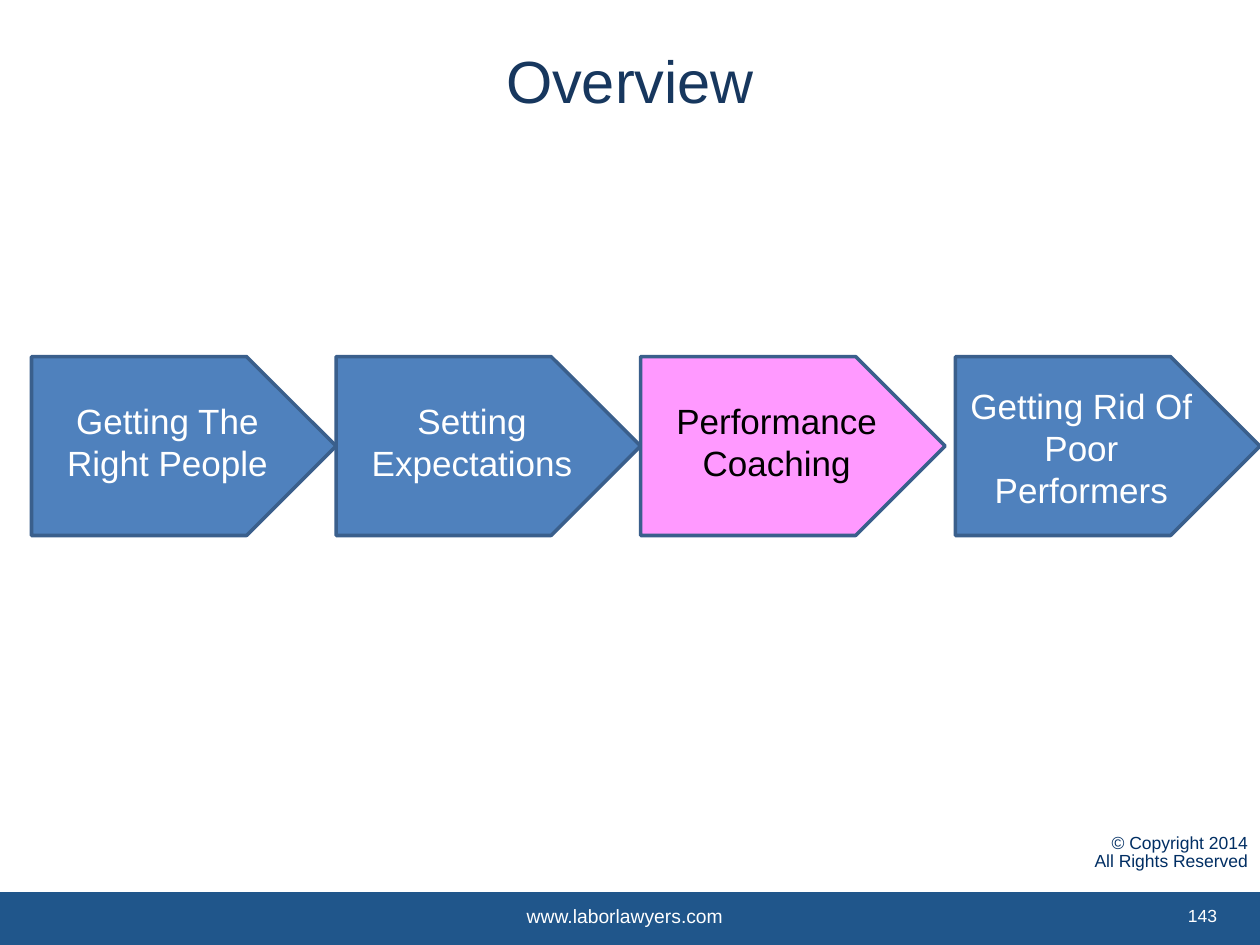
from pptx import Presentation
from pptx.dml.color import RGBColor
from pptx.enum.shapes import MSO_SHAPE as Shape
from pptx.enum.text import MSO_ANCHOR as Anchor, PP_ALIGN as Align
from pptx.util import Inches, Pt

WIDE, HIGH = 10, 7.5
NAVY, BLUE, EDGE, PINK = "17375E", "4F81BD", "3A5F8C", "FF99FF"
WHITE, BLACK = "FFFFFF", "000000"
LEFT, TOP, STEP, TALL = 0.25, 2.83, 2.417, 1.42
STEPS = [
    (["Getting The Right People"], BLUE, WHITE),
    (["Setting Expectations"], BLUE, WHITE),
    (["Performance Coaching"], PINK, BLACK),
    (["Getting Rid Of", "Poor Performers"], BLUE, WHITE),
]


def tint(code):
    """Turn a hex string into a colour."""
    return RGBColor.from_string(code)


def write(shape, lines, size=20, color=WHITE, align=Align.CENTER,
          anchor=Anchor.TOP, space=None):
    """Fill a shape with formatted lines of text."""
    frame = shape.text_frame
    frame.word_wrap = True
    frame.vertical_anchor = anchor
    frame.text = "\n".join(lines)
    for para in frame.paragraphs:
        para.alignment = align
        para.line_spacing = space
        para.font.name = "Arial"
        para.font.size = Pt(size)
        para.font.color.rgb = tint(color)


def label(slide, box, lines, **style):
    """Add a text box at the given place."""
    write(slide.shapes.add_textbox(*map(Inches, box)), lines, **style)


def block(slide, kind, box, fill, edge=None):
    """Add a filled shape, outlined if an edge colour is given."""
    shape = slide.shapes.add_shape(kind, *map(Inches, box))
    shape.shadow.inherit = False
    shape.fill.solid()
    shape.fill.fore_color.rgb = tint(fill)
    if edge:
        shape.line.color.rgb = tint(edge)
        shape.line.width = Pt(2)
    else:
        shape.line.fill.background()


def head(slide, text):
    """Place and format the title."""
    title = slide.shapes.title
    title.left, title.top = 0, Inches(0.17)
    title.width, title.height = Inches(WIDE), Inches(0.92)
    write(title, [text], size=34, color=NAVY, anchor=Anchor.MIDDLE)


def foot(slide):
    """Add the footer band with its notes."""
    block(slide, Shape.RECTANGLE, (0, 7.08, WIDE, HIGH - 7.08), "20568B")
    label(slide, (7.92, 6.58, 2.08, 0.5),
          ["© Copyright 2014", "All Rights Reserved"],
          size=10, color="002E63", align=Align.RIGHT, space=0.85)
    label(slide, (0, 7.13, 9.92, 0.29), ["www.laborlawyers.com"], size=11)
    label(slide, (9.33, 7.13, 0.58, 0.27), ["143"], size=10, align=Align.LEFT)


def flow(slide):
    """Draw the row of steps, the last one flush with the right edge."""
    last = len(STEPS) - 1
    for col, (lines, fill, color) in enumerate(STEPS):
        end = col == last
        left = WIDE - STEP if end else LEFT + col * STEP
        block(slide, Shape.PENTAGON, (left, TOP, STEP, TALL), fill, EDGE)
        box = (left, 3, 2, 1.11) if end else (left + 0.08, 3.12, 2, 0.77)
        label(slide, box, lines, color=color)


def main():
    """Build and save the slide."""
    deck = Presentation()
    deck.slide_width, deck.slide_height = Inches(WIDE), Inches(HIGH)
    slide = deck.slides.add_slide(deck.slide_layouts[5])
    foot(slide)
    head(slide, "Overview")
    flow(slide)
    deck.save("out.pptx")


if __name__ == "__main__":
    main()
